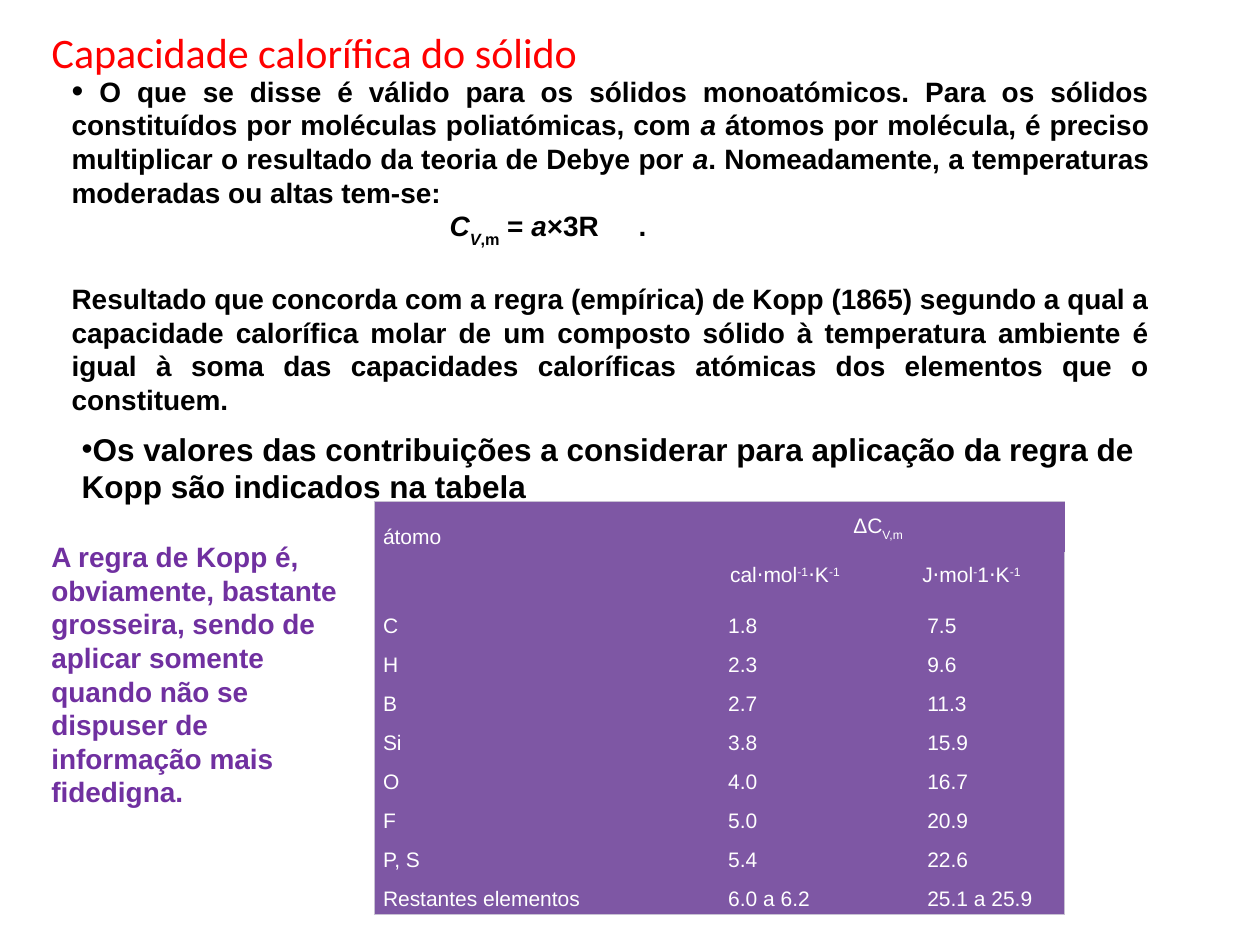
import lxml.etree
import pptx
import pptx.dml.color
import pptx.enum.text
import pptx.oxml.ns
import pptx.util

Inches, Pt, qn = pptx.util.Inches, pptx.util.Pt, pptx.oxml.ns.qn
Align, Anchor = pptx.enum.text.PP_ALIGN, pptx.enum.text.MSO_ANCHOR


def colour(hex_string):
    return pptx.dml.color.RGBColor.from_string(hex_string)


def write(paragraph, runs, size, hex_string, bold=False, font="Arial"):
    """Add (text, italic, baseline percent) runs and set the paragraph's font."""
    for text, italic, baseline in runs:
        run = paragraph.add_run()
        run.text = text
        if italic:
            run.font.italic = True
        if baseline:
            run._r.get_or_add_rPr().set("baseline", str(baseline * 1000))
    paragraph.font.size = Pt(size)
    paragraph.font.name = font
    paragraph.font.bold = bold
    paragraph.font.color.rgb = colour(hex_string)


presentation = pptx.Presentation()
presentation.slide_width, presentation.slide_height = Inches(10), Inches(7.5)
slide = presentation.slides.add_slide(presentation.slide_layouts[5])

# Title
title = slide.shapes.title
title.left, title.top, title.width, title.height = (
    Inches(0.31), Inches(0.16), Inches(4.49), Inches(0.84))
title.text_frame.word_wrap = False
title.text_frame.auto_size = pptx.enum.text.MSO_AUTO_SIZE.NONE
title.text_frame.vertical_anchor = Anchor.TOP
title_paragraph = title.text_frame.paragraphs[0]
title_paragraph.alignment = Align.LEFT
write(title_paragraph, [("Capacidade calorífica do sólido", False, 0)],
      24, "FF0000", font="Calibri")

# Text boxes: place, anchor, size, colour, then (runs, alignment, bullet size, space before)
debye = [
    (" O que se disse é válido para os sólidos monoatómicos. Para os sólidos constituídos "
     "por moléculas poliatómicas, com ", False, 0),
    ("a", True, 0),
    (" átomos por molécula, é preciso multiplicar o resultado da teoria de Debye por ", False, 0),
    ("a", True, 0),
    (". Nomeadamente, a temperaturas moderadas ou altas tem-se:", False, 0),
]
equation = [("\t", False, 0), ("C", True, 0), ("V", True, -30), (",m", False, -30),
            (" = ", False, 0), ("a", True, 0), ("×3R\t.", False, 0)]
kopp = [("Resultado que concorda com a regra (empírica) de Kopp (1865) segundo a qual a "
         "capacidade calorífica molar de um composto sólido à temperatura ambiente é igual à "
         "soma das capacidades caloríficas atómicas dos elementos que o constituem.", False, 0)]
caveat = [("A regra de Kopp é, obviamente, bastante grosseira, sendo de aplicar somente "
           "quando não se dispuser de informação mais fidedigna.", False, 0)]
contributions = [("Os valores das contribuições a considerar para aplicação da regra de "
                  "Kopp são indicados na tabela", False, 0)]
boxes = [
    ((0.47, 0.55, 8.75, 2.79), Anchor.MIDDLE, 16, "000000",
     [(debye, Align.JUSTIFY, 120, 0), (equation, Align.LEFT, 0, 0),
      (kopp, Align.JUSTIFY, 0, 19)]),
    ((0.31, 4.22, 2.5, 2.26), Anchor.MIDDLE, 16, "7030A0", [(caveat, Align.LEFT, 0, 0)]),
    ((0.55, 3.36, 8.59, 0.71), Anchor.TOP, 18, "000000",
     [(contributions, Align.LEFT, 100, 0)]),
]
for place, anchor, size, hex_string, paragraphs in boxes:
    frame = slide.shapes.add_textbox(*map(Inches, place)).text_frame
    frame.word_wrap = True
    frame.vertical_anchor = anchor
    for index, (runs, alignment, bullet, space) in enumerate(paragraphs):
        paragraph = frame.add_paragraph() if index else frame.paragraphs[0]
        paragraph.alignment = alignment
        paragraph.space_before = Pt(space)
        properties = paragraph._p.get_or_add_pPr()
        if bullet:
            lxml.etree.SubElement(properties, qn("a:buSzPct"), val=str(bullet * 1000))
            lxml.etree.SubElement(properties, qn("a:buFont"), typeface="Arial")
            lxml.etree.SubElement(properties, qn("a:buChar"), char="•")
        if runs is equation:
            stops = lxml.etree.SubElement(properties, qn("a:tabLst"))
            for position in (3, 4.5):
                lxml.etree.SubElement(stops, qn("a:tab"), pos=str(Inches(position)), algn="l")
        write(paragraph, runs, size, hex_string, bold=True)

# Table of atomic contributions
contribution_rows = [
    ("C", "1.8", "7.5"), ("H", "2.3", "9.6"), ("B", "2.7", "11.3"), ("Si", "3.8", "15.9"),
    ("O", "4.0", "16.7"), ("F", "5.0", "20.9"), ("P, S", "5.4", "22.6"),
    ("Restantes elementos", "6.0 a 6.2", "25.1 a 25.9"),
]
header_rows = [
    ([("átomo", False, 0)], [("ΔC", False, 0), ("V,m", False, -25)], []),
    ([], [("cal⋅mol", False, 0), ("-1", False, 30), ("⋅K", False, 0), ("-1", False, 30)],
     [("J⋅mol", False, 0), ("-", False, 30), ("1⋅K", False, 0), ("-1", False, 30)]),
]
rows = header_rows + [[[(text, False, 0)] for text in row] for row in contribution_rows]
column_widths = (2.52, 1.48, 1.48)
row_heights = [0.4] * len(header_rows) + [0.31] * len(contribution_rows)
indents = ((0, 0), (0.02, 0.2), (0, 0.32))
table = slide.shapes.add_table(
    len(rows), len(column_widths), Inches(2.97), Inches(3.98),
    Inches(sum(column_widths)), Inches(sum(row_heights))).table
table.first_row = table.horz_banding = False
for column, width in zip(table.columns, column_widths):
    column.width = Inches(width)
for row, height in zip(table.rows, row_heights):
    row.height = Inches(height)
table.cell(0, 0).merge(table.cell(1, 0))
table.cell(0, 1).merge(table.cell(0, 2))

last_row, last_column = len(rows) - 1, len(column_widths) - 1
for row_index, row in enumerate(rows):
    for column_index, runs in enumerate(row):
        cell = table.cell(row_index, column_index)
        cell.margin_left = cell.margin_right = Inches(0.07)
        cell.margin_top = cell.margin_bottom = 0
        paragraph = cell.text_frame.paragraphs[0]
        if row_index == column_index == 0:
            cell.margin_top = Inches(0.19)
        else:
            paragraph.line_spacing = 1.5
        is_header = row_index < len(header_rows)
        paragraph.alignment = Align.CENTER if is_header and column_index else Align.JUSTIFY
        if not is_header:
            margin, first_line = indents[column_index]
            properties = paragraph._p.get_or_add_pPr()
            properties.set("marL", str(Inches(margin)))
            properties.set("indent", str(Inches(first_line)))
        write(paragraph, runs, 12, "FFFFFF")

        outer_edges = {"a:lnL": column_index == 0, "a:lnR": column_index == last_column,
                       "a:lnT": row_index == 0, "a:lnB": row_index == last_row}
        cell_properties = cell._tc.get_or_add_tcPr()
        for edge, is_outer in outer_edges.items():
            line = lxml.etree.SubElement(cell_properties, qn(edge), w=str(Pt(0.75)))
            if is_outer:
                fill = lxml.etree.SubElement(line, qn("a:solidFill"))
                lxml.etree.SubElement(fill, qn("a:srgbClr"), val="C8C1D3")
            else:
                lxml.etree.SubElement(line, qn("a:noFill"))
        cell.fill.solid()
        cell.fill.fore_color.rgb = colour("7E57A4")

presentation.save("out.pptx")
